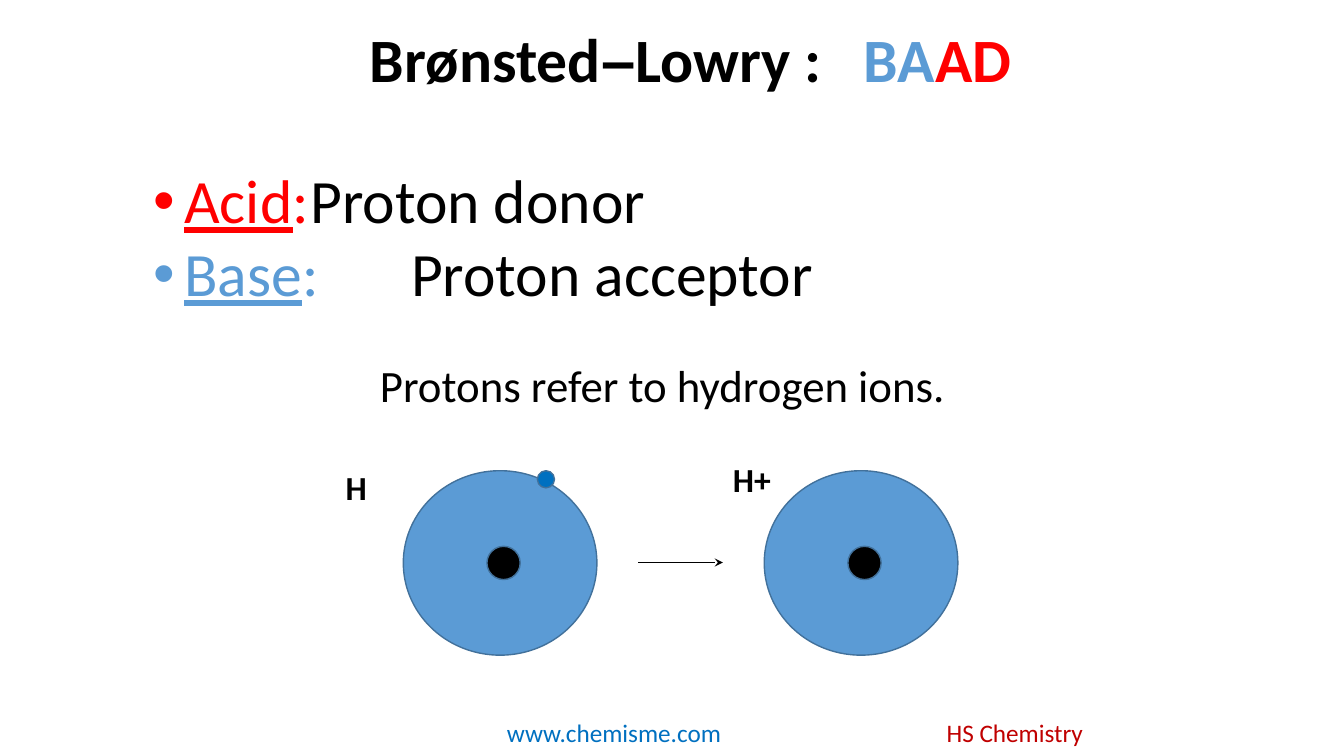
from lxml import etree
from pptx import Presentation
from pptx.dml.color import RGBColor
from pptx.enum.shapes import MSO_CONNECTOR, MSO_SHAPE
from pptx.enum.text import MSO_ANCHOR, PP_ALIGN
from pptx.oxml.ns import qn
from pptx.util import Inches, Pt

STRAIGHT = MSO_CONNECTOR.STRAIGHT
OVAL = MSO_SHAPE.OVAL
MIDDLE = MSO_ANCHOR.MIDDLE
CENTER = PP_ALIGN.CENTER

BLACK = RGBColor(0x00, 0x00, 0x00)
RED = RGBColor(0xFF, 0x00, 0x00)
DARK_RED = RGBColor(0xC0, 0x00, 0x00)
BLUE = RGBColor(0x5B, 0x9B, 0xD5)
DEEP_BLUE = RGBColor(0x00, 0x70, 0xC0)
OUTLINE = RGBColor(0x42, 0x71, 0x9B)

FONT = "Calibri"
TITLE_BOX = (2.75, 0, 8.2, 1.25)
TITLE_RUNS = [
    ("Brønsted", FONT, BLACK),
    ("–", "Arial", BLACK),
    ("Lowry :", FONT, BLACK),
    (" ", FONT, BLACK),
    ("BA", FONT, BLUE),
    ("AD", FONT, RED),
]
TITLE_GAP = Pt(20)

DEFINITIONS_BOX = (0.98, 1.64, 12, 5.86)
DEFINITIONS = [
    ("Acid", "Proton donor", RED),
    ("Base", "Proton acceptor", BLUE),
]
TAB_SIZE = Inches(1)

LABELS = [
    ("www.chemisme.com", (4.93, 7.07, 2.41, 0.4), 18, DEEP_BLUE, False),
    ("HS Chemistry", (9.29, 7.07, 2.41, 0.4), 18, DARK_RED, False),
    ("Protons refer to hydrogen ions.", (3.67, 3.5, 7.17, 0.64), 32, BLACK, False),
    ("H", (3.33, 4.58, 0.75, 0.5), 24, BLACK, True),
    ("H+", (7.17, 4.5, 0.75, 0.5), 24, BLACK, True),
]

ATOM_LEFTS = (4, 7.58)
ATOM_TOP = 4.67
ATOM_SIZE = (1.92, 1.83)
NUCLEUS_OFFSET = (0.83, 0.75)
NUCLEUS_SIZE = 0.33
ELECTRON_OFFSET = 1.33
ELECTRON_SIZE = 0.17
ARROW = (6.33, 5.58, 7.17, 5.58)


def inches(values):
    return [Inches(value) for value in values]


def add_text_frame(slide, box):
    text_frame = slide.shapes.add_textbox(*inches(box)).text_frame
    text_frame.word_wrap = True
    return text_frame


def style_font(font, size, color=None, bold=False):
    font.name = FONT
    font.size = Pt(size)
    font.bold = bold
    if color is not None:
        font.color.rgb = color


def add_run(paragraph, text, color):
    run = paragraph.add_run()
    run.text = text
    run.font.color.rgb = color
    return run


def add_title(slide):
    text_frame = add_text_frame(slide, TITLE_BOX)
    text_frame.vertical_anchor = MIDDLE
    paragraph = text_frame.paragraphs[0]
    paragraph.alignment = CENTER
    paragraph.line_spacing = 0.9
    style_font(paragraph.font, 44, bold=True)
    for text, font_name, color in TITLE_RUNS:
        run = add_run(paragraph, text, color)
        run.font.name = font_name
        if text == " ":
            run.font._element.set("spc", str(int(TITLE_GAP.pt * 100)))


def add_bullet(paragraph, color):
    properties = paragraph._p.get_or_add_pPr()
    properties.set("marL", str(Inches(0.75)))
    properties.set("indent", str(Inches(-0.31)))
    properties.set("defTabSz", str(TAB_SIZE))
    bullet_color = etree.SubElement(properties, qn("a:buClr"))
    etree.SubElement(bullet_color, qn("a:srgbClr"), val=str(color))
    etree.SubElement(properties, qn("a:buFont"), typeface="Arial")
    etree.SubElement(properties, qn("a:buChar"), char="•")


def add_definitions(slide):
    text_frame = add_text_frame(slide, DEFINITIONS_BOX)
    for index, (term, meaning, color) in enumerate(DEFINITIONS):
        paragraph = text_frame.add_paragraph() if index else text_frame.paragraphs[0]
        paragraph.level = 1
        paragraph.line_spacing = 0.9
        paragraph.space_before = Pt(5 if index else 0)
        add_bullet(paragraph, color)
        style_font(paragraph.font, 44)
        add_run(paragraph, term, color).font.underline = True
        add_run(paragraph, ":\t", color)
        add_run(paragraph, meaning, BLACK)


def add_label(slide, text, box, size, color, bold):
    paragraph = add_text_frame(slide, box).paragraphs[0]
    paragraph.text = text
    style_font(paragraph.font, size, color, bold)


def add_circle(slide, left, top, width, height, color):
    circle = slide.shapes.add_shape(OVAL, *inches((left, top, width, height)))
    circle.shadow.inherit = False
    circle.fill.solid()
    circle.fill.fore_color.rgb = color
    circle.line.color.rgb = OUTLINE
    circle.line.width = Pt(1)


def add_atom(slide, left):
    add_circle(slide, left, ATOM_TOP, *ATOM_SIZE, BLUE)
    add_circle(slide, left + NUCLEUS_OFFSET[0], ATOM_TOP + NUCLEUS_OFFSET[1],
               NUCLEUS_SIZE, NUCLEUS_SIZE, BLACK)


def add_arrow(slide):
    arrow = slide.shapes.add_connector(STRAIGHT, *inches(ARROW))
    arrow.line.color.rgb = BLACK
    arrow.line.width = Pt(0.75)
    etree.SubElement(arrow.line._get_or_add_ln(), qn("a:tailEnd"), type="stealth")
    etree.SubElement(arrow._element.spPr, qn("a:effectLst"))


def main():
    presentation = Presentation()
    presentation.slide_width = Inches(13.33)
    presentation.slide_height = Inches(7.5)
    slide = presentation.slides.add_slide(presentation.slide_layouts[6])
    add_title(slide)
    add_definitions(slide)
    for left in ATOM_LEFTS:
        add_atom(slide, left)
    add_circle(slide, ATOM_LEFTS[0] + ELECTRON_OFFSET, ATOM_TOP,
               ELECTRON_SIZE, ELECTRON_SIZE, DEEP_BLUE)
    for label in LABELS:
        add_label(slide, *label)
    add_arrow(slide)
    presentation.save("out.pptx")


if __name__ == "__main__":
    main()
